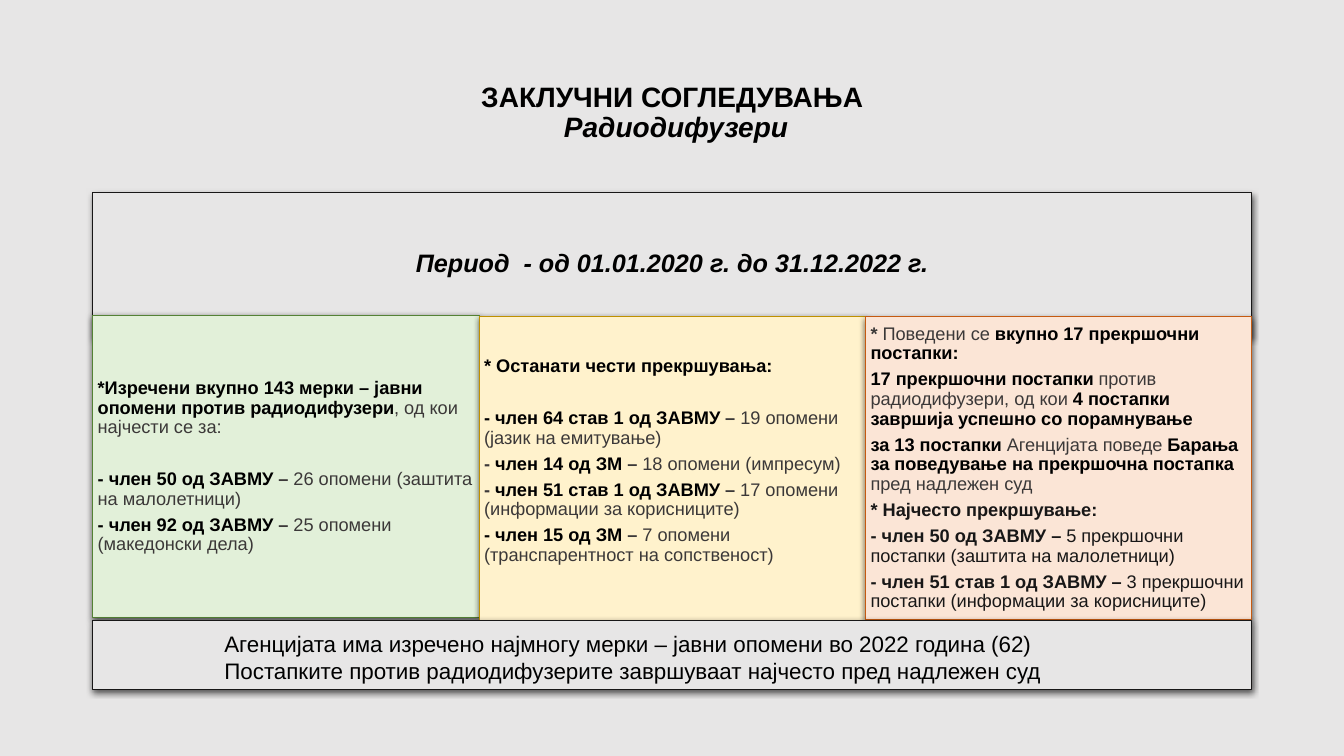
from lxml.etree import SubElement as Sub
from pptx import Presentation
from pptx.dml.color import RGBColor as RGB
from pptx.enum.shapes import MSO_SHAPE as Shape
from pptx.enum.text import MSO_ANCHOR as Anchor, PP_ALIGN as Align
from pptx.oxml.ns import qn
from pptx.util import Pt

HUES = {
    "grey": "E7E6E6", "ink": "181717", "black": "000000", "dark": "3B3838",
    "mint": "E2F0D9", "green": "548235", "cream": "FFF2CC", "gold": "BF9000",
    "peach": "FBE5D6", "rust": "C55A11",
}
KINDS = {
    "plain": ("black", False, False), "bold": ("black", True, False),
    "slant": ("black", True, True), "strong": ("dark", True, False),
    "soft": ("dark", False, False), "head": ("ink", True, False),
    "note": ("ink", False, False),
}
GAP = 4.5
WIDE = 23


def hue(name):
    return RGB.from_string(HUES[name])


def apply(item, form):
    for key, value in form.items():
        setattr(item, key, value)


class Deck:
    def __init__(self, wide, high):
        self.font = "Arial"
        self.show = Presentation()
        apply(self.show, {"slide_width": Pt(wide), "slide_height": Pt(high)})
        self.page = self.show.slides.add_slide(self.show.slide_layouts[6])
        fill = self.page.background.fill
        fill.solid()
        fill.fore_color.rgb = hue("grey")

    def label(self, item, paras, size, pad, align=Align.LEFT,
              anchor=Anchor.MIDDLE, pitch=0.9):
        frame = item.text_frame
        sides = ("margin_left", "margin_top", "margin_right", "margin_bottom")
        apply(frame, {"word_wrap": True, "vertical_anchor": anchor})
        apply(frame, {side: Pt(n) for side, n in zip(sides, pad)})
        for rank, (after, runs) in enumerate(paras):
            para = frame.add_paragraph() if rank else frame.paragraphs[0]
            apply(para, {"alignment": align, "line_spacing": pitch,
                         "space_before": Pt(0), "space_after": Pt(after)})
            for kind, words in runs:
                if words == "\v":
                    para.add_line_break()
                    continue
                run = para.add_run()
                run.text = words
                tone, bold, slant = KINDS[kind]
                apply(run.font, {"name": self.font, "size": Pt(size),
                                 "bold": bold, "italic": slant})
                run.font.color.rgb = hue(tone)

    def text(self, area, paras, size, pad=(7.2, 3.6, 7.2, 3.6), **form):
        item = self.page.shapes.add_textbox(*map(Pt, area))
        self.label(item, paras, size, pad, **form)

    def panel(self, area, fill, edge):
        item = self.page.shapes.add_shape(Shape.RECTANGLE, *map(Pt, area))
        item.fill.solid()
        item.fill.fore_color.rgb = hue(fill)
        item.line.color.rgb = hue(edge)
        item.line.width = Pt(0.75)
        self.shade(item)
        return item

    def shade(self, item):
        item.shadow.inherit = False
        glow = item._element.spPr.find(qn("a:effectLst"))
        cast = Sub(glow, qn("a:outerShdw"), blurRad=str(Pt(4.5)),
                   dist=str(Pt(1.5)), dir="5400000", algn="ctr", rotWithShape="0")
        tint = Sub(cast, qn("a:srgbClr"), val=HUES["black"])
        Sub(tint, qn("a:alpha"), val="63000")


def law(rule, note, dash="bold"):
    return GAP, [(dash, "- "), ("bold", f"член {rule} "),
                 ("strong", "– "), ("soft", note)]


def fine(rule, note):
    return GAP, [("head", f"- член {rule} од ЗАВМУ – "), ("note", note)]


LEFT, WIDTH = 66.2, 828
deck = Deck(960, 540)

deck.text((LEFT, 28.8, WIDTH, 104.4),
          [(0, [("bold", "ЗАКЛУЧНИ СОГЛЕДУВАЊА"), ("bold", "\v"),
                ("slant", " Радиодифузери")])], 20, align=Align.CENTER)

period = deck.panel((LEFT, 137.5, WIDTH, 103), "grey", "ink")
deck.label(period, [(GAP, [("slant", "Период  - од 01.01.2020 г. до 31.12.2022 г.")])],
           18, (5, 5, 5, 5), align=Align.CENTER)

warned = [
    (WIDE, [("bold", "*Изречени вкупно 143 мерки – јавни опомени против радиодифузери"),
            ("soft", ", од кои најчести се за:")]),
    law("50 од ЗАВМУ", "26 опомени (заштита на малолетници) "),
    law("92 од ЗАВМУ", "25 опомени (македонски дела)"),
]
others = [
    (WIDE, [("bold", "* Останати чести прекршувања: ")]),
    law("64 став 1 од ЗАВМУ", "19 опомени (јазик на емитување) "),
    law("14 од ЗМ", "18 опомени (импресум)", "strong"),
    law("51 став 1 од ЗАВМУ", "17 опомени (информации за корисниците)", "strong"),
    law("15 од ЗМ", "7 опомени (транспарентност на сопственост)"),
]
courts = [
    (GAP, [("strong", "* "), ("soft", "Поведени се "),
           ("bold", "вкупно 17 прекршочни постапки: ")]),
    (GAP, [("bold", "17 прекршочни постапки "),
           ("soft", "против радиодифузери, од кои "),
           ("bold", "4 постапки завршија успешно со порамнување")]),
    (GAP, [("bold", "за 13 постапки "), ("soft", "Агенцијата поведе "),
           ("bold", "Барања за поведување на прекршочна постапка "),
           ("soft", "пред надлежен суд")]),
    (GAP, [("head", "* Најчесто прекршување: ")]),
    fine("50", "5 прекршочни постапки (заштита на малолетници) "),
    fine("51 став 1", "3 прекршочни постапки (информации за корисниците)"),
]
columns = [
    (225.4, 216, "mint", "green", 3.6, warned),
    (226, 225.4, "cream", "gold", 22.2, others),
    (226.3, 216, "peach", "rust", 3.6, courts),
]
step = WIDTH / len(columns)
for rank, (top, high, fill, edge, foot, paras) in enumerate(columns):
    box = deck.panel((LEFT + rank * step, top, step, high), fill, edge)
    deck.label(box, paras, 13, (3.6, 3.6, 3.6, foot))

deck.panel((LEFT, 443.2, WIDTH, 49.5), "grey", "ink")
deck.text((153.2, 446.4, 606, 46),
          [(0, [("plain", "Агенцијата има изречено најмногу мерки – јавни опомени во 2022 година (62)")]),
           (0, [("plain", "Постапките против радиодифузерите завршуваат најчесто пред надлежен суд")])],
          16, anchor=Anchor.TOP, pitch=1.0)

deck.show.save("out.pptx")
